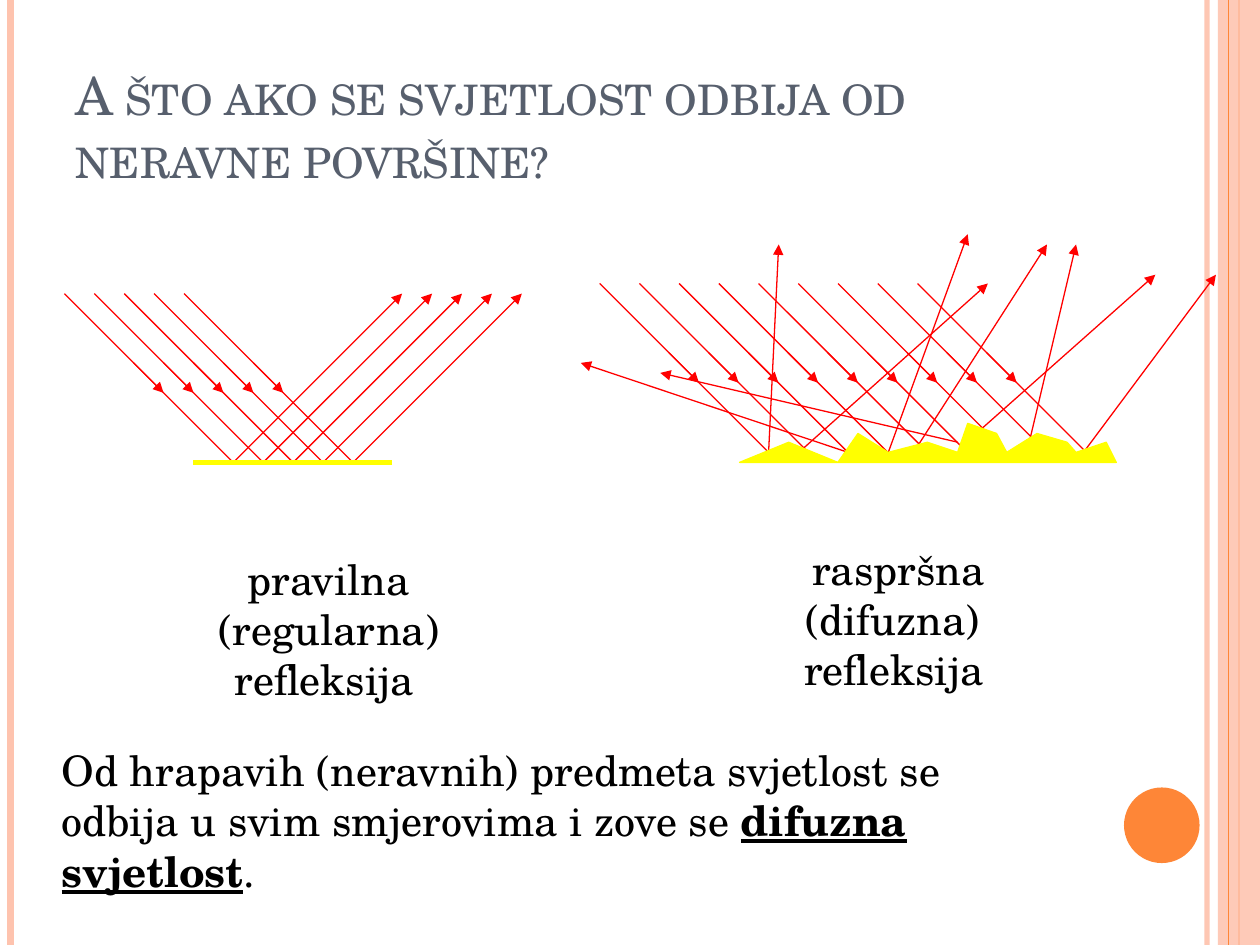
from dataclasses import dataclass

from lxml import etree
from pptx import Presentation
from pptx import util as u
from pptx.dml.color import RGBColor
from pptx.enum import shapes, text
from pptx.oxml.ns import qn


@dataclass(frozen=True)
class Theme:
    font: str = "TeX Gyre Schola"
    ink: str = "000000"
    heading: str = "575F6D"
    pale: str = "FEC3AE"
    accent: str = "FE8637"
    light: str = "FF0000"
    surface: str = "FFFF00"
    title_size: float = 30
    body_size: float = 24
    small_size: float = 18
    thin: float = 0.75


class SlideBuilder:
    def __init__(self, slide, theme):
        self.s = slide
        self.theme = theme

    def paint(self, fmt, color, alpha=100):
        fmt.solid()
        fmt.fore_color.rgb = RGBColor.from_string(color)
        if alpha < 100:
            clr = fmt._xPr.find(qn("a:solidFill"))[0]
            etree.SubElement(clr, qn("a:alpha"), val=str(alpha * 1000))

    def line(self, start, end, color, width, alpha=100, arrow=False, parent=None):
        points = [u.Pt(v) for v in (*start, *end)]
        sp = (parent or self.s).shapes.add_connector(
            shapes.MSO_CONNECTOR.STRAIGHT, *points)
        sp.line.width = u.Pt(width)
        self.paint(sp.line.fill, color, alpha)
        if arrow:
            etree.SubElement(sp.line._get_or_add_ln(), qn("a:tailEnd"), type="triangle")
        etree.SubElement(sp._element.spPr, qn("a:effectLst"))

    def shape(self, kind, box, color, alpha=100):
        sp = self.s.shapes.add_shape(kind, *map(u.Pt, box))
        sp.shadow.inherit = False
        self.paint(sp.fill, color, alpha)
        sp.line.fill.background()

    def outline(self, points, color):
        vertices = [(u.Pt(x), u.Pt(y)) for x, y in points]
        fb = self.s.shapes.build_freeform(*vertices[0])
        fb.add_line_segments(vertices[1:], close=True)
        sp = fb.convert_to_shape()
        sp.shadow.inherit = False
        self.paint(sp.fill, color)
        self.paint(sp.line.fill, color)
        sp.line.width = u.Pt(self.theme.thin)

    def ray(self, x, y, reach):
        group = self.s.shapes.add_group_shape()
        for near, far, arrow in ((0, reach, False), (39.6, 56.7, True)):
            self.line((x + near, y + near), (x + far, y + far), self.theme.light,
                      self.theme.thin, arrow=arrow, parent=group)

    def reflection(self, start, end):
        self.line(start, end, self.theme.light, self.theme.thin, arrow=True)

    def run(self, p, content, size, color, strong=False):
        r = p.add_run()
        r.text = content
        r.font.name = self.theme.font
        r.font.size = u.Pt(size)
        r.font.color.rgb = RGBColor.from_string(color)
        r.font.bold = strong
        r.font.underline = strong
        return r

    def title(self, box, content):
        sp = self.s.shapes.title
        sp.left, sp.top, sp.width, sp.height = map(u.Pt, box)
        tf = sp.text_frame
        tf.auto_size = text.MSO_AUTO_SIZE.NONE
        tf.vertical_anchor = text.MSO_ANCHOR.BOTTOM
        p = tf.paragraphs[0]
        p.alignment = text.PP_ALIGN.LEFT
        r = self.run(p, content, self.theme.title_size, self.theme.heading)
        r.font._element.set("cap", "small")

    def textbox(self, box, paragraphs, align=text.PP_ALIGN.LEFT,
                anchor=text.MSO_ANCHOR.TOP):
        tf = self.s.shapes.add_textbox(*map(u.Pt, box)).text_frame
        tf.word_wrap = True
        tf.vertical_anchor = anchor
        for i, runs in enumerate(paragraphs):
            p = tf.add_paragraph() if i else tf.paragraphs[0]
            p.alignment = align
            for content, size, strong in runs:
                self.run(p, content, size, self.theme.ink, strong)

    def label(self, box, name):
        size = self.theme.body_size
        self.textbox(box, [[(name, size, False)],
                           [("refleksija", size, False),
                            (" ", self.theme.small_size, False)]],
                     text.PP_ALIGN.CENTER, text.MSO_ANCHOR.MIDDLE)


def draw_frame(b):
    t = b.theme

    def rule(x, color, width, alpha=100):
        b.line((x, 0), (x, 540), color, width, alpha)

    rule(689.8, t.pale, 3, 93)
    rule(6, t.pale, 4.5)
    rule(708, t.accent, 1.5)
    b.shape(shapes.MSO_SHAPE.RECTANGLE, (696, 0, 24, 540), t.pale, 87)
    rule(702, t.accent, t.thin)
    b.shape(shapes.MSO_SHAPE.OVAL, (642.3, 450, 43.2, 43.2), t.accent)


def draw_regular(b):
    reach, top = 96.5, 167.8
    starts = [36.8 + 17.1 * i for i in range(5)]
    for x in starts:
        b.ray(x, top, reach)
    for x in starts:
        b.reflection((x + reach, top + reach), (x + 2 * reach, top))
    b.line((110.3, 264.3), (223.8, 264.3), b.theme.surface, 3)


def draw_diffuse(b):
    for i in range(9):
        b.ray(342.7 + 22.7 * i, 162, 96.5)
    reflections = [
        ((439.2, 258.5), (445, 139.7)),
        ((456.5, 258.5), (564.5, 162)),
        ((484.6, 258.5), (331.9, 207.4)),
        ((507.6, 258.5), (553, 133.9)),
        ((518.4, 264.2), (598.3, 139.7)),
        ((547.2, 252.7), (377.3, 213.1)),
        ((558.7, 247), (660.2, 157)),
        ((586.8, 258.5), (614.9, 139.7)),
        ((614.9, 264.2), (694.8, 157)),
    ]
    for start, end in reflections:
        b.reflection(start, end)
    rough_surface = [
        (422.6, 264.2), (450.7, 252.7), (478.8, 264.2), (490.3, 247.7),
        (507.6, 258.5), (529.9, 252.7), (547.2, 258.5), (553, 241.9),
        (569.5, 247.7), (575.3, 258.5), (592.6, 247.7), (609.8, 252.7),
        (614.9, 258.5), (632.2, 252.7), (637.9, 264.2),
    ]
    b.outline(rough_surface, b.theme.surface)


def main():
    prs = Presentation()
    prs.slide_width, prs.slide_height = u.Pt(720), u.Pt(540)
    b = SlideBuilder(prs.slides.add_slide(prs.slide_layouts[5]), Theme())
    draw_frame(b)
    b.title((36, 21.6, 588, 90), "A što ako se svjetlost odbija od neravne površine?")
    b.label((76.3, 326.9, 223.2, 64.8), "pravilna (regularna)")
    b.label((406.1, 321.1, 214.6, 64.8), "raspršna (difuzna) ")
    draw_regular(b)
    draw_diffuse(b)
    size = b.theme.body_size
    b.textbox((28.1, 421.9, 540, 94.3), [[
        ("Od hrapavih (neravnih) predmeta svjetlost se odbija u svim smjerovima i zove se ",
         size, False),
        ("difuzna svjetlost", size, True),
        (".", size, False),
    ]])
    prs.save("out.pptx")


if __name__ == "__main__":
    main()
